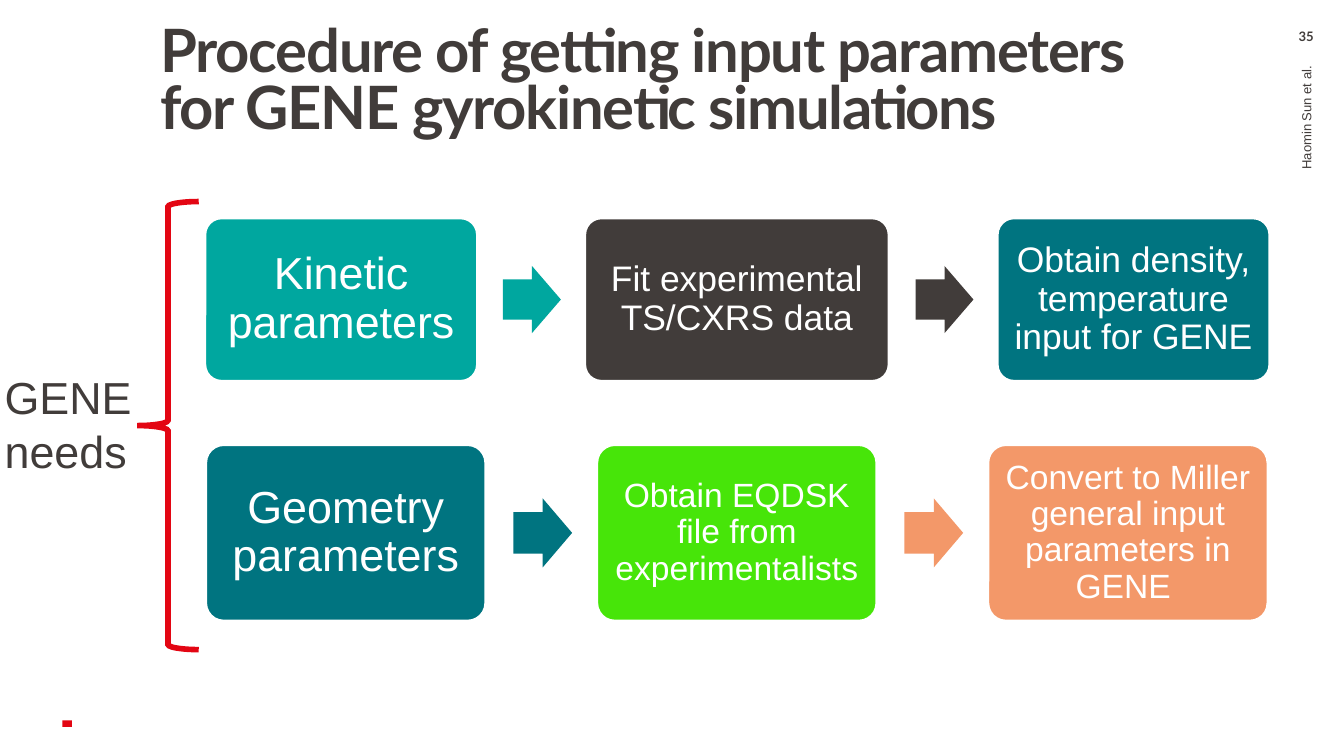
from lxml import etree
from pptx import Presentation
from pptx import util as u
from pptx.dml.color import RGBColor
from pptx.enum import shapes, text
from pptx.oxml import ns

PX = 6350  # 144 px to the inch
WHITE = RGBColor(0xFF, 0xFF, 0xFF)
RED = RGBColor(0xE3, 0x06, 0x13)
DARK = RGBColor(0x41, 0x3C, 0x3A)
TURQUOISE = RGBColor(0x00, 0xA7, 0x9F)
TEAL = RGBColor(0x00, 0x74, 0x80)
GREEN = RGBColor(0x47, 0xE5, 0x09)
ORANGE = RGBColor(0xF3, 0x98, 0x69)

presentation = Presentation()
presentation.slide_width, presentation.slide_height = 1440 * PX, 810 * PX
slide = presentation.slides.add_slide(presentation.slide_layouts[6])


def add_shape(kind, box, fill=None, line=None, width=1):
    shape = slide.shapes.add_shape(kind, *[n * PX for n in box])
    shape.shadow.inherit = False
    if fill is None:
        shape.fill.background()
    else:
        shape.fill.solid()
        shape.fill.fore_color.rgb = fill
    if line is None:
        shape.line.fill.background()
    else:
        shape.line.color.rgb = line
        shape.line.width = u.Pt(width)
    return shape


def write(shape, words, size, color=DARK, font="Arial", bold=False, align="LEFT",
          anchor="TOP", insets=(14, 7, 14, 7), spacing=1.0):
    frame = shape.text_frame
    frame.text = words
    frame.word_wrap = True
    frame.vertical_anchor = text.MSO_ANCHOR[anchor]
    frame.margin_left, frame.margin_top, frame.margin_right, frame.margin_bottom = [
        n * PX for n in insets]
    paragraph = frame.paragraphs[0]
    paragraph.alignment = text.PP_ALIGN[align]
    paragraph.line_spacing = spacing
    run = paragraph.runs[0]
    run.font.name, run.font.size, run.font.bold = font, u.Pt(size), bold
    run.font.color.rgb = color
    return run


# Title, with slightly tightened letters
title = slide.shapes.add_textbox(143 * PX, 28 * PX, 1159 * PX, 147 * PX)
title_run = write(title, "Procedure of getting input parameters for GENE gyrokinetic simulations",
                  32, font="Lato", bold=True, insets=(29, 0, 12, 7), spacing=0.8)
title_run._r.get_or_add_rPr().set("spc", "-70")

# Page furniture: red mark, author up the right edge, page number
add_shape(shapes.MSO_SHAPE.RECTANGLE, (67, 772, 10, 7), RED)
author = slide.shapes.add_textbox(1121 * PX, 295 * PX, 557 * PX, 81 * PX)
author.rotation = 270
write(author, "Haomin Sun et al.", 7, align="RIGHT", anchor="MIDDLE")
number = slide.shapes.add_textbox(1359 * PX, 30 * PX, 81 * PX, 26 * PX)
write(number, "35", 7, font="Lato", bold=True, align="CENTER", insets=(14, 0, 14, 0))

# Two process rows: top, height, arrow size, then steps and arrows
rows = [
    (234, 174, (62, 72),
     [(220, 291, TURQUOISE, "Kinetic parameters", 24, 14),
      (627, 325, DARK, "Fit experimental TS/CXRS data", 19, 11),
      (1069, 291, TEAL, "Obtain density, temperature input for GENE", 19, 11)],
     [(539, TURQUOISE), (981, DARK)]),
    (477, 188, (63, 74),
     [(221, 299, TEAL, "Geometry parameters", 24, 14),
      (640, 299, GREEN, "Obtain EQDSK file from experimentalists", 18, 10),
      (1059, 299, ORANGE, "Convert to Miller general input parameters in GENE ", 18, 10)],
     [(550, TEAL), (969, ORANGE)]),
]
for top, height, (arrow_width, arrow_height), steps, arrows in rows:
    for left, width, color, words, size, inset in steps:
        step = add_shape(shapes.MSO_SHAPE.ROUNDED_RECTANGLE,
                         (left, top, width, height), color, WHITE)
        step.adjustments[0] = 0.1
        write(step, words, size, WHITE, align="CENTER", anchor="MIDDLE",
              insets=[inset] * 4, spacing=0.9)
    for left, color in arrows:
        arrow_top = top + (height - arrow_height) // 2
        arrow = add_shape(shapes.MSO_SHAPE.RIGHT_ARROW,
                          (left, arrow_top, arrow_width, arrow_height), color)
        arrow.adjustments[0] = 0.6
        arrow.adjustments[1] = 0.5

# Brace with mitred corners, and its label
brace = add_shape(shapes.MSO_SHAPE.LEFT_BRACE, (147, 216, 66, 480), line=RED, width=3)
outline = brace.element.spPr.find(ns.qn("a:ln"))
etree.SubElement(outline, ns.qn("a:miter")).set("lim", "800000")
label = slide.shapes.add_textbox(-9 * PX, 389 * PX, 170 * PX, 131 * PX)
write(label, "GENE needs", 24)

presentation.save("out.pptx")
